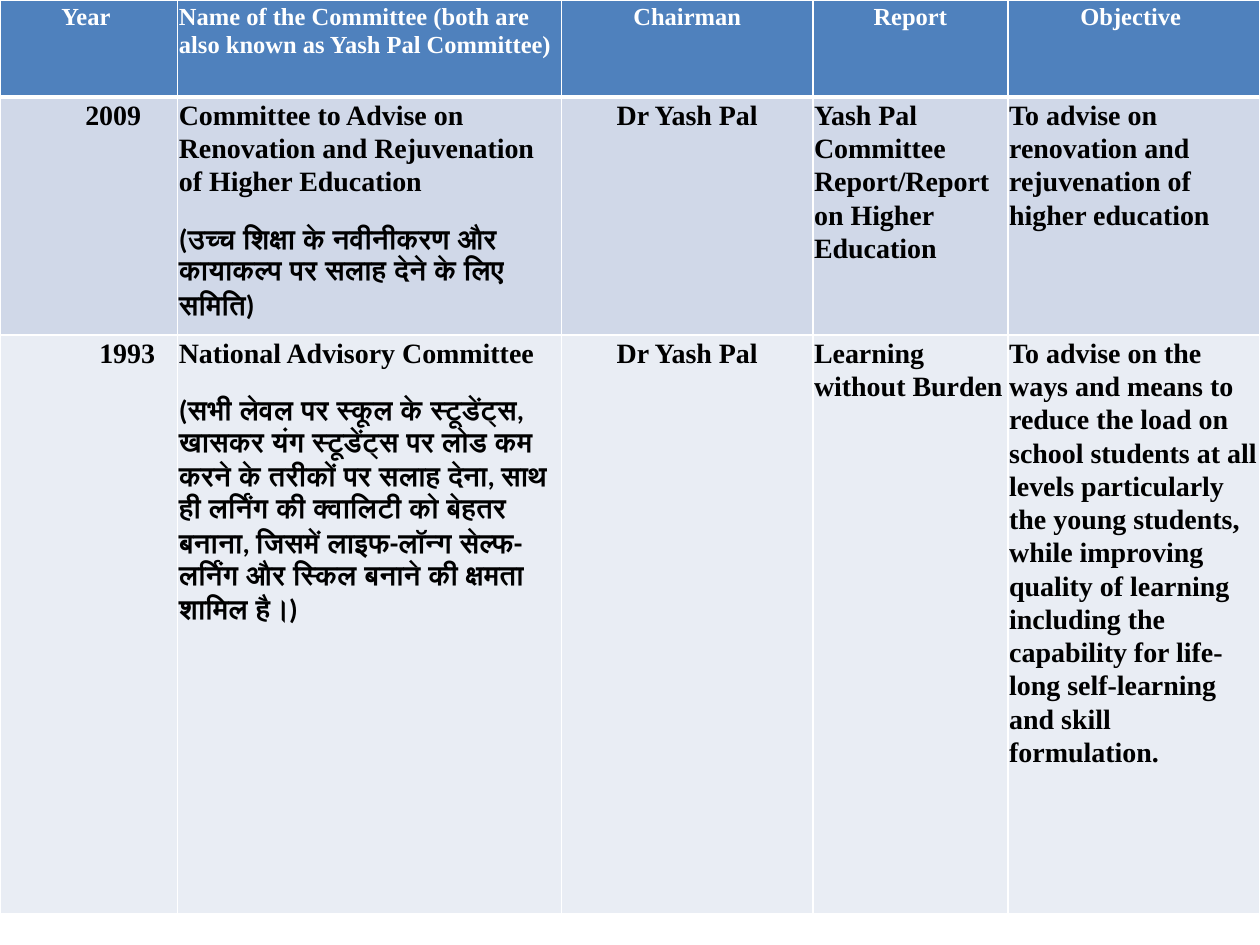
from lxml import etree
from pptx import Presentation
from pptx.dml.color import RGBColor
from pptx.enum.text import PP_ALIGN
from pptx.oxml.ns import qn
from pptx.util import Pt

CENTER = PP_ALIGN.CENTER
LEFT = PP_ALIGN.LEFT

COLORS = {
    "header": "4F81BD",
    "recent": "D0D8E8",
    "earlier": "E9EDF4",
    "border": "FFFFFF",
    "header_text": "FFFFFF",
    "body_text": "000000",
}
SERIF = "Times New Roman"
HINDI_FONT = "Calibri"

COLUMN_WIDTHS = [101.5, 219.5, 143.5, 111.5, 144]
ROW_HEIGHTS = [55.5, 136, 331]
ROW_FILLS = ["header", "recent", "earlier"]
YEAR_INDENTS = [0, 48, 56]
YEAR, CHAIRMAN = 0, 2
NAME = 1

ROWS = [
    [
        ["Year "],
        ["Name of the Committee (both are also known as Yash Pal Committee)"],
        ["Chairman"],
        ["Report"],
        ["Objective "],
    ],
    [
        ["2009"],
        [
            "Committee to Advise on Renovation and Rejuvenation of Higher Education",
            "(उच्च शिक्षा के नवीनीकरण और कायाकल्प पर सलाह देने के लिए समिति)",
        ],
        ["Dr Yash Pal"],
        ["Yash Pal Committee Report/Report on Higher Education"],
        ["To advise on renovation and rejuvenation of higher education"],
    ],
    [
        ["1993"],
        [
            "National Advisory Committee",
            "(सभी लेवल पर स्कूल के स्टूडेंट्स, खासकर यंग स्टूडेंट्स पर लोड कम करने के "
            "तरीकों पर सलाह देना, साथ ही लर्निंग की क्वालिटी को बेहतर बनाना, जिसमें "
            "लाइफ-लॉन्ग सेल्फ-लर्निंग और स्किल बनाने की क्षमता शामिल है।)",
        ],
        ["Dr Yash Pal"],
        ["Learning without Burden"],
        [
            "To advise on the ways and means to reduce the load on school students "
            "at all levels particularly the young students, while improving quality "
            "of learning including the capability for life-long self-learning and "
            "skill formulation."
        ],
    ],
]


def rgb(name):
    return RGBColor.from_string(COLORS[name])


def add_borders(cell, top, bottom):
    properties = cell._tc.get_or_add_tcPr()
    for side, width in (("L", 1), ("R", 1), ("T", top), ("B", bottom)):
        line = etree.SubElement(properties, qn(f"a:ln{side}"), w=str(Pt(width)))
        fill = etree.SubElement(line, qn("a:solidFill"))
        etree.SubElement(fill, qn("a:srgbClr"), val=COLORS["border"])


def write_paragraph(paragraph, text, font_name, size, color, alignment, indent):
    paragraph.alignment = alignment
    paragraph.line_spacing = 1.07
    paragraph.space_after = Pt(12.5)
    if indent:
        paragraph._p.get_or_add_pPr().set("marL", str(Pt(indent)))
    run = paragraph.add_run()
    run.text = text
    run.font.name = font_name
    run.font.size = Pt(size)
    run.font.bold = True
    run.font.color.rgb = rgb(color)


def fill_cell(cell, row, column, texts):
    is_header = row == 0
    add_borders(cell, top=3 if row == 1 else 1, bottom=3 if is_header else 1)
    cell.fill.solid()
    cell.fill.fore_color.rgb = rgb(ROW_FILLS[row])
    cell.margin_left = cell.margin_right = Pt(0.75)
    cell.margin_top = cell.margin_bottom = Pt(0.75)
    centered = column == CHAIRMAN or (is_header and column != NAME)
    frame = cell.text_frame
    for position, text in enumerate(texts):
        write_paragraph(
            frame.add_paragraph() if position else frame.paragraphs[0],
            text,
            HINDI_FONT if position else SERIF,
            14 if is_header else 16,
            "header_text" if is_header else "body_text",
            CENTER if centered else LEFT,
            YEAR_INDENTS[row] if column == YEAR else 0,
        )


def add_committee_table(slide):
    table = slide.shapes.add_table(
        len(ROWS), len(COLUMN_WIDTHS), Pt(0), Pt(0),
        Pt(sum(COLUMN_WIDTHS)), Pt(sum(ROW_HEIGHTS)),
    ).table
    for column, width in zip(table.columns, COLUMN_WIDTHS):
        column.width = Pt(width)
    for row, height in zip(table.rows, ROW_HEIGHTS):
        row.height = Pt(height)
    for row, entries in enumerate(ROWS):
        for column, texts in enumerate(entries):
            fill_cell(table.cell(row, column), row, column, texts)


def main():
    presentation = Presentation()
    presentation.slide_width = Pt(720)
    presentation.slide_height = Pt(540)
    slide = presentation.slides.add_slide(presentation.slide_layouts[6])
    add_committee_table(slide)
    presentation.save("out.pptx")


if __name__ == "__main__":
    main()
